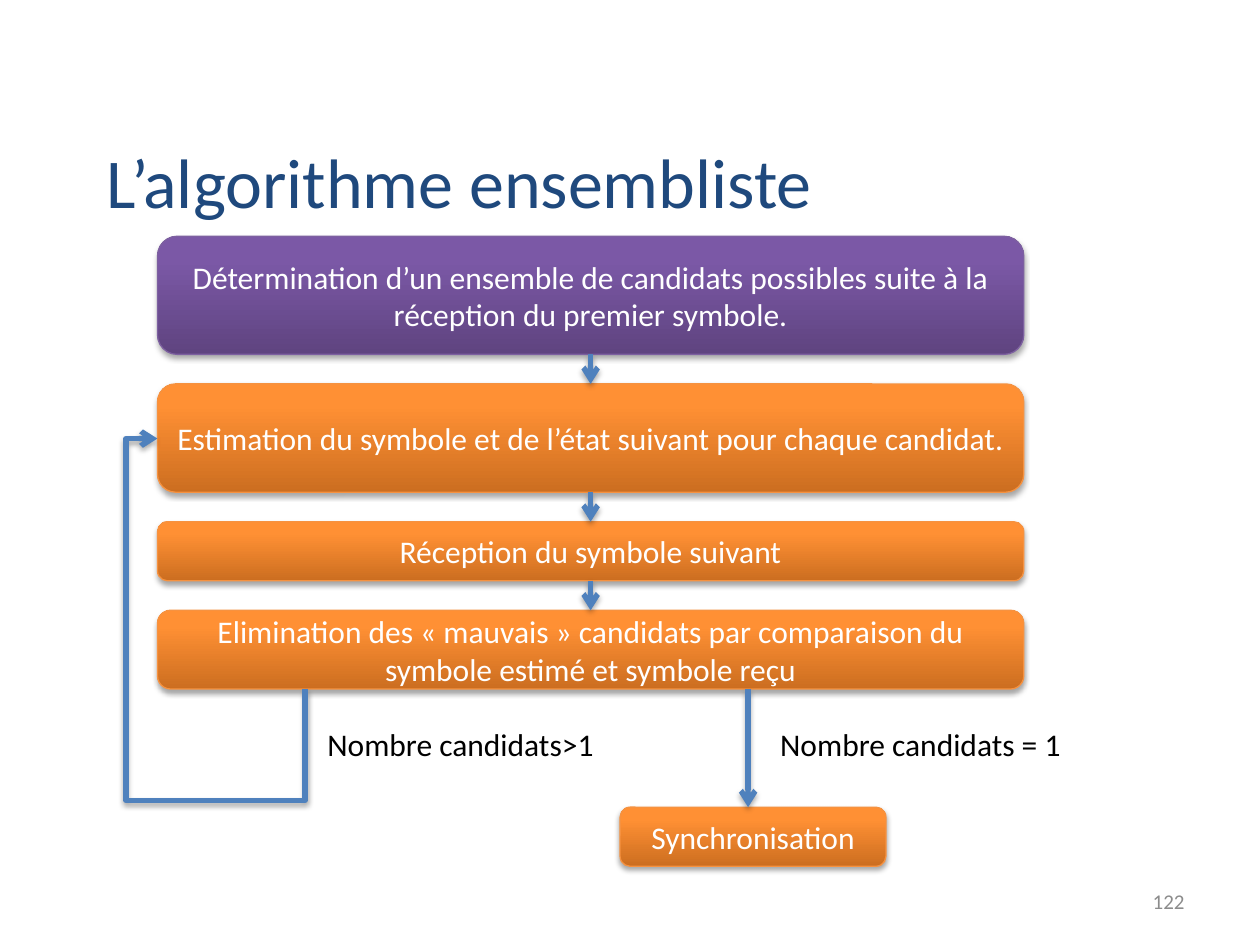
"""Build the flowchart slide for the set-based algorithm."""
import copy

import pptx
import pptx.dml.color
import pptx.enum.shapes
import pptx.enum.text
import pptx.oxml
import pptx.oxml.ns
import pptx.util

Pt = pptx.util.Pt
qn = pptx.oxml.ns.qn
RGB = pptx.dml.color.RGBColor.from_string
ALIGN = pptx.enum.text.PP_ALIGN
ANCHOR = pptx.enum.text.MSO_ANCHOR
CONNECTOR = pptx.enum.shapes.MSO_CONNECTOR
NS = pptx.oxml.ns.nsdecls("a")
SHADOW = (
    f'<a:effectLst {NS}><a:outerShdw blurRad="40000" dist="23000" dir="5400000" rotWithShape="0">'
    '<a:srgbClr val="000000"><a:alpha val="35000"/></a:srgbClr></a:outerShdw></a:effectLst>'
)


def write(sp, text, size, color, align, anchor):
    tf = sp.text_frame
    tf.word_wrap = True
    tf.vertical_anchor = anchor
    p = tf.paragraphs[0]
    p.text = text
    p.alignment = align
    p.font.name = "Calibri"
    p.font.size = Pt(size)
    p.font.color.rgb = RGB(color)


def style_arrow(c):
    c.line.color.rgb = RGB("4F81BD")
    c.line.width = Pt(3)
    c.line._get_or_add_ln().append(pptx.oxml.parse_xml(f'<a:tailEnd {NS} type="arrow"/>'))
    c._element.spPr.append(pptx.oxml.parse_xml(SHADOW))


prs = pptx.Presentation()
prs.slide_width, prs.slide_height = Pt(720), Pt(540)
s = prs.slides.add_slide(prs.slide_layouts[6])

texts = [
    ("L’algorithme ensembliste", 54, 45, 612, 116, 40, "1F497D", ALIGN.LEFT, ANCHOR.MIDDLE),
    ("Nombre candidats>1", 180, 410.6, 191.25, 29, 18, "000000", ALIGN.LEFT, ANCHOR.TOP),
    ("Nombre candidats = 1", 438.75, 410.6, 191.25, 29, 18, "000000", ALIGN.LEFT, ANCHOR.TOP),
    ("122", 516, 500.5, 168, 28.75, 12, "8C8C8C", ALIGN.RIGHT, ANCHOR.MIDDLE),
]
for text, x, y, w, h, size, color, align, anchor in texts:
    sp = s.shapes.add_textbox(Pt(x), Pt(y), Pt(w), Pt(h))
    write(sp, text, size, color, align, anchor)

purple = ("5F4480", "7B58A6", "7C57A8", "7D60A0")
orange = ("CC6E20", "FF9034", "FF9136", "F69240")
steps = [
    ("Détermination d’un ensemble de candidats possibles suite à la réception du premier symbole.",
     90, 135, 495, 67.5, purple),
    ("Estimation du symbole et de l’état suivant pour chaque candidat.", 90, 219.38, 495, 61.87, orange),
    ("Réception du symbole suivant", 90, 298.13, 495, 33.75, orange),
    ("Elimination des « mauvais » candidats par comparaison du symbole estimé et symbole reçu",
     90, 348.75, 495, 45, orange),
    ("Synchronisation", 354.38, 461.25, 151.87, 33.75, orange),
]
boxes = []
for text, x, y, w, h, palette in steps:
    sp = s.shapes.add_shape(
        pptx.enum.shapes.MSO_SHAPE.ROUNDED_RECTANGLE, Pt(x), Pt(y), Pt(w), Pt(h))
    sp.fill.gradient()
    sp.fill.gradient_angle = 90
    stops = sp._element.spPr.find(qn("a:gradFill")).find(qn("a:gsLst"))
    stops.append(copy.deepcopy(stops[0]))
    for stop, position, color in zip(sp.fill.gradient_stops, (0, 0.8, 1), palette):
        stop.position = position
        stop.color.rgb = RGB(color)
    sp.line.color.rgb = RGB(palette[3])
    sp.line.width = Pt(0.75)
    sp._element.spPr.append(pptx.oxml.parse_xml(SHADOW))
    write(sp, text, 18, "FFFFFF", ALIGN.CENTER, ANCHOR.MIDDLE)
    boxes.append(sp)

for upper, lower in zip(boxes[:3], boxes[1:4]):
    c = s.shapes.add_connector(CONNECTOR.STRAIGHT, 0, 0, 0, 0)
    c.begin_connect(upper, 2)
    c.end_connect(lower, 0)
    style_arrow(c)

c = s.shapes.add_connector(CONNECTOR.STRAIGHT, Pt(427.5), Pt(393.75), Pt(427.5), Pt(461.25))
style_arrow(c)

c = s.shapes.add_connector(CONNECTOR.ELBOW, Pt(60.5), Pt(364.5), Pt(203.75), Pt(280.1))
c.end_connect(boxes[1], 1)
c.left, c.top, c.width, c.height = Pt(60.5), Pt(280.1), Pt(143.25), Pt(84.4)
c._element.spPr.find(qn("a:xfrm")).set("rot", "16200000")
geom = c._element.spPr.find(qn("a:prstGeom"))
geom.set("prst", "bentConnector4")
guides = geom.find(qn("a:avLst"))
for name, value in (("adj1", -44400), ("adj2", 121300)):
    guides.append(pptx.oxml.parse_xml(f'<a:gd {NS} name="{name}" fmla="val {value}"/>'))
style_arrow(c)

prs.save("out.pptx")
